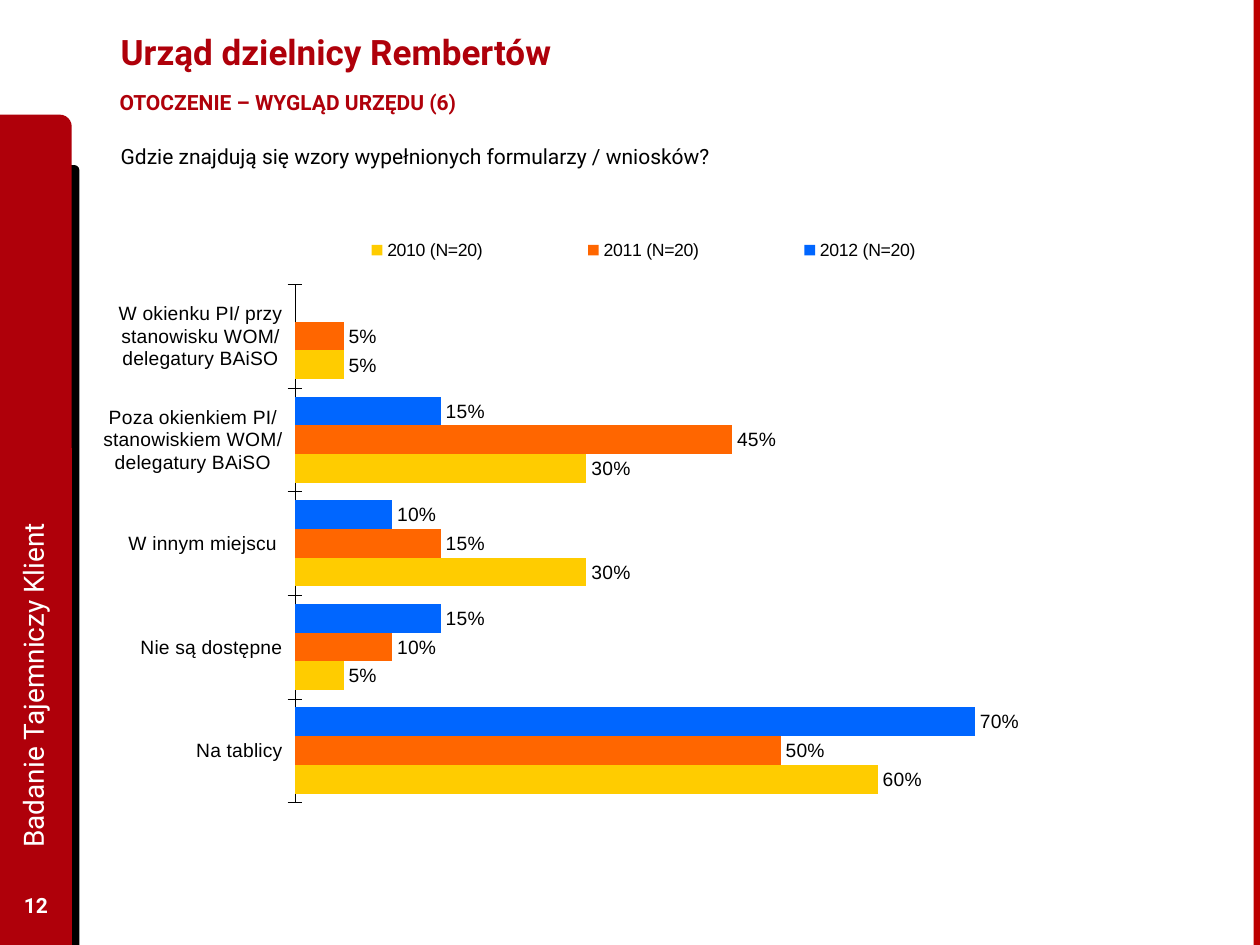
from dataclasses import dataclass

from lxml import etree
from pptx import Presentation
from pptx.chart.data import CategoryChartData
from pptx.dml.color import RGBColor
from pptx.enum.chart import XL_CHART_TYPE, XL_LABEL_POSITION, XL_LEGEND_POSITION, XL_TICK_MARK
from pptx.enum.shapes import MSO_SHAPE
from pptx.enum.text import MSO_ANCHOR, PP_ALIGN
from pptx.oxml.ns import qn
from pptx.util import Inches, Pt

BAR_CHART = XL_CHART_TYPE.BAR_CLUSTERED
OUTSIDE_END = XL_LABEL_POSITION.OUTSIDE_END
LEGEND_TOP = XL_LEGEND_POSITION.TOP
TICK_CROSS = XL_TICK_MARK.CROSS
TICK_NONE = XL_TICK_MARK.NONE
RECTANGLE = MSO_SHAPE.RECTANGLE
ROUND_CORNER = MSO_SHAPE.ROUND_1_RECTANGLE
TOP = MSO_ANCHOR.TOP
MIDDLE = MSO_ANCHOR.MIDDLE
LEFT = PP_ALIGN.LEFT
CENTER = PP_ALIGN.CENTER

RED = "AF000A"
BLACK = "000000"
WHITE = "FFFFFF"
PERCENT = "0%"


@dataclass(frozen=True)
class Area:
    left: float
    top: float
    width: float
    height: float

    def lengths(self) -> list:
        return [Inches(n) for n in (self.left, self.top, self.width, self.height)]


@dataclass(frozen=True)
class Panel:
    kind: int
    area: Area
    color: str


@dataclass(frozen=True)
class YearSeries:
    name: str
    color: str
    values: tuple


PANELS = [
    Panel(ROUND_CORNER, Area(0.39, 1.31, 0.24, 6.19), BLACK),
    Panel(ROUND_CORNER, Area(0, 0.91, 0.57, 6.59), RED),
    Panel(RECTANGLE, Area(9.95, 0, 0.05, 7.5), "BD0000"),
]
CATEGORIES = [
    "W okienku PI/ przy stanowisku WOM/ delegatury BAiSO",
    "Poza okienkiem PI/ stanowiskiem WOM/ delegatury BAiSO",
    "W innym miejscu ",
    "Nie są dostępne",
    "Na tablicy",
]
SERIES = [
    YearSeries("2012 (N=20)", "0066FF", (None, 0.15, 0.1, 0.15, 0.7)),
    YearSeries("2011 (N=20)", "FF6600", (0.05, 0.45, 0.15, 0.1, 0.5)),
    YearSeries("2010 (N=20)", "FFCC00", (0.05, 0.3, 0.3, 0.05, 0.6)),
]


def rgb(color: str) -> RGBColor:
    return RGBColor.from_string(color)


def style_font(font, size: float, color: str, name: str, bold: bool = False) -> None:
    font.size = Pt(size)
    font.name = name
    font.bold = bold
    font.color.rgb = rgb(color)


def add_panel(page, panel: Panel) -> None:
    shape = page.shapes.add_shape(panel.kind, *panel.area.lengths())
    shape.shadow.inherit = False
    shape.fill.solid()
    shape.fill.fore_color.rgb = rgb(panel.color)
    shape.line.fill.background()


def add_text(page, text: str, area: Area, *, size: float, color: str = RED,
             bold: bool = False, anchor=TOP, align=LEFT, rotation: float = 0,
             side_inset: float = 0.1, wrap: bool = True) -> None:
    box = page.shapes.add_textbox(*area.lengths())
    box.rotation = rotation
    frame = box.text_frame
    frame.word_wrap = wrap
    frame.vertical_anchor = anchor
    frame.margin_left = frame.margin_right = Inches(side_inset)
    para = frame.paragraphs[0]
    para.alignment = align
    span = para.add_run()
    span.text = text
    style_font(span.font, size, color, "Roboto", bold)


def set_layout(parent, area: Area, inner: bool = False) -> None:
    for old in parent.findall(qn("c:layout")):
        parent.remove(old)
    layout = etree.Element(qn("c:layout"))
    manual = etree.SubElement(layout, qn("c:manualLayout"))
    settings = [("layoutTarget", "inner")] if inner else []
    settings += [("xMode", "edge"), ("yMode", "edge"), ("x", area.left),
                 ("y", area.top), ("w", area.width), ("h", area.height)]
    for tag, value in settings:
        etree.SubElement(manual, qn(f"c:{tag}")).set("val", str(value))
    position = parent.find(qn("c:legendPos"))
    if position is None:
        parent.insert(0, layout)
    else:
        position.addnext(layout)


def add_bar_chart(page, area: Area) -> None:
    chart_data = CategoryChartData(number_format=PERCENT)
    chart_data.categories = CATEGORIES
    for item in SERIES:
        chart_data.add_series(item.name, item.values)
    chart = page.shapes.add_chart(BAR_CHART, *area.lengths(), chart_data).chart
    chart.has_title = False
    style_font(chart.font, 11, BLACK, "Arial")

    plot = chart.plots[0]
    plot.gap_width = 60
    plot.overlap = 0
    plot.vary_by_categories = False
    for series, item in zip(plot.series, SERIES):
        series.format.fill.solid()
        series.format.fill.fore_color.rgb = rgb(item.color)
        labels = series.data_labels
        labels.show_value = True
        labels.number_format = PERCENT
        labels.number_format_is_linked = False
        labels.position = OUTSIDE_END
        style_font(labels.font, 11, BLACK, "Arial")

    category_axis = chart.category_axis
    category_axis.reverse_order = True
    category_axis.major_tick_mark = TICK_CROSS
    category_axis.minor_tick_mark = TICK_NONE
    category_axis.format.line.color.rgb = rgb(BLACK)
    category_axis.format.line.width = Pt(0.23)
    style_font(category_axis.tick_labels.font, 11, BLACK, "Arial")

    value_axis = chart.value_axis
    value_axis.minimum_scale = 0
    value_axis.maximum_scale = 0.8
    value_axis.has_major_gridlines = False
    value_axis.visible = False

    chart.has_legend = True
    legend = chart.legend
    legend.position = LEGEND_TOP
    legend.include_in_layout = False
    style_font(legend.font, 10.1, BLACK, "Arial")
    plot_area = chart.element.find(f".//{qn('c:plotArea')}")
    legend_element = chart.element.find(f".//{qn('c:legend')}")
    set_layout(plot_area, Area(0.17, 0.09, 0.68, 0.91), inner=True)
    set_layout(legend_element, Area(0.15, 0, 0.65, 0.06))


def main() -> None:
    deck = Presentation()
    deck.slide_width = Inches(10)
    deck.slide_height = Inches(7.5)
    page = deck.slides.add_slide(deck.slide_layouts[6])
    for panel in PANELS:
        add_panel(page, panel)
    add_text(page, "Urząd dzielnicy Rembertów", Area(0.86, 0.05, 7.77, 0.72),
             size=20, bold=True, anchor=MIDDLE)
    add_text(page, "Badanie Tajemniczy Klient", Area(-2.62, 3.69, 5.76, 0.51),
             size=16, color=WHITE, anchor=MIDDLE, rotation=270)
    add_text(page, "12", Area(0, 6.98, 0.57, 0.4), size=12, color=WHITE,
             bold=True, anchor=MIDDLE, align=CENTER)
    add_text(page, "OTOCZENIE – WYGLĄD URZĘDU (6)", Area(0.75, 0.66, 3.85, 0.33),
             size=12, bold=True, side_inset=0.2, wrap=False)
    add_text(page, "Gdzie znajdują się wzory wypełnionych formularzy / wniosków?",
             Area(0.86, 1.09, 6.47, 0.3), size=12, color=BLACK)
    add_bar_chart(page, Area(0.8, 1.85, 9.07, 4.52))
    deck.save("out.pptx")


if __name__ == "__main__":
    main()
